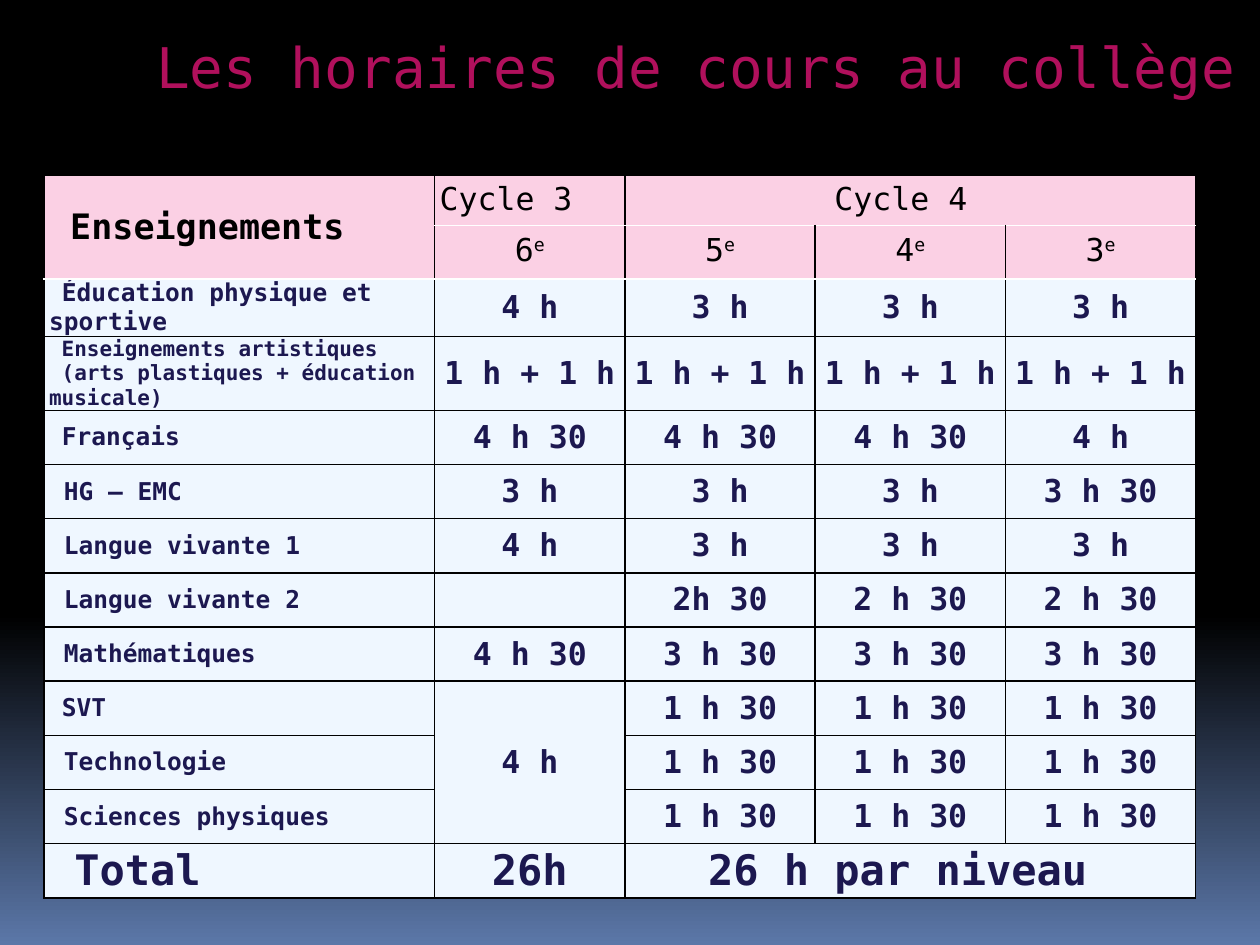
from dataclasses import dataclass

from lxml.etree import SubElement
from pptx import Presentation
from pptx.dml.color import RGBColor
from pptx.enum.text import MSO_ANCHOR, PP_ALIGN
from pptx.oxml.ns import qn
from pptx.util import Inches, Pt


@dataclass(frozen=True)
class Theme:
    font: str = "DejaVu Sans Mono"
    black: str = "000000"
    white: str = "FFFFFF"
    horizon: str = "5B77A8"
    title: str = "B0105C"
    header: str = "FBD0E4"
    body: str = "EFF7FF"
    ink: str = "1C1850"
    title_size: int = 32
    total_size: int = 24
    heading_size: int = 20
    hours_size: int = 18
    subject_size: int = 14
    small_size: int = 12


class TimetableSlide:
    """Draws timetable elements on a grid of tenths of an inch; in text, | ends a small lead and ^ starts a superscript."""

    def __init__(self, presentation, theme):
        self.theme = theme
        self.slide = presentation.slides.add_slide(presentation.slide_layouts[6])

    def grid(self, units):
        return Inches(units / 10)

    def background(self):
        fill = self.slide.background.fill
        fill.gradient()
        fill.gradient_angle = 270
        stops = ((0.65, self.theme.black), (1, self.theme.horizon))
        for stop, (position, color) in zip(fill.gradient_stops, stops):
            stop.position = position
            stop.color.rgb = RGBColor.from_string(color)

    def format_run(self, run, size, color, bold=False):
        run.font.name = self.theme.font
        run.font.size = Pt(size)
        run.font.bold = bold
        run.font.color.rgb = RGBColor.from_string(color)

    def fill_paragraph(self, paragraph, text, size, color, bold):
        lead, _, main_text = text.rpartition("|")
        base, _, raised = main_text.partition("^")
        paragraph.text = lead or base
        extra = [base] if lead else []
        for part in extra + ([raised] if raised else []):
            paragraph.add_run().text = part
        for run in paragraph.runs:
            self.format_run(run, size, color, bold)
        if lead:
            paragraph.runs[0].font.size = Pt(self.theme.small_size)
        if raised:
            paragraph.runs[-1].font._element.set("baseline", "30000")

    def title(self, text, left, top, width, height):
        box = self.slide.shapes.add_textbox(*map(self.grid, (left, top, width, height)))
        box.text_frame.word_wrap = True
        box.text_frame.text = text
        run = box.text_frame.paragraphs[0].runs[0]
        self.format_run(run, self.theme.title_size, self.theme.title)

    def table(self, left, top, columns, rows):
        frame = self.slide.shapes.add_table(
            len(rows), len(columns),
            *map(self.grid, (left, top, sum(columns), sum(rows))))
        for column, width in zip(frame.table.columns, columns):
            column.width = self.grid(width)
        for row, height in zip(frame.table.rows, rows):
            row.height = self.grid(height)
        return frame.table

    def borders(self, cell, top, bottom):
        black = self.theme.black
        properties = cell._tc.get_or_add_tcPr()
        for side, color in (("L", black), ("R", black), ("T", top), ("B", bottom)):
            line = SubElement(properties, qn(f"a:ln{side}"), w=str(Pt(1)))
            fill = SubElement(line, qn("a:solidFill"))
            SubElement(fill, qn("a:srgbClr"), val=color)

    def cell(self, cell, row, text, size, bold, align, anchor=MSO_ANCHOR.MIDDLE):
        theme = self.theme
        header = row < 2
        self.borders(cell, theme.white if row in (1, 2) else theme.black,
                     theme.white if header else theme.black)
        cell.fill.solid()
        cell.fill.fore_color.rgb = RGBColor.from_string(theme.header if header else theme.body)
        cell.margin_left = cell.margin_right = self.grid(0.4)
        cell.margin_top = cell.margin_bottom = self.grid(0.5 if header else 0)
        cell.vertical_anchor = anchor
        cell.text_frame.text = text
        color = theme.black if header else theme.ink
        for paragraph, line in zip(cell.text_frame.paragraphs, text.split("\n")):
            paragraph.alignment = align
            if line:
                self.fill_paragraph(paragraph, line, size, color, bold)


TIMETABLE = (
    (" Enseignements", "Cycle 3", "Cycle 4 ", "", ""),
    ("", "6^e", "5^e", "4^e", "3^e"),
    (" |Éducation physique et sportive", "4 h", "3 h", "3 h", "3 h"),
    (" Enseignements artistiques\n (arts plastiques + éducation musicale)", *["1 h + 1 h"] * 4),
    (" |Français", "4 h 30", "4 h 30", "4 h 30", "4 h"),
    (" HG – EMC", "3 h", "3 h", "3 h", "3 h 30"),
    (" Langue vivante 1", "4 h", "3 h", "3 h", "3 h"),
    (" Langue vivante 2", "", "2h 30", "2 h 30", "2 h 30"),
    (" Mathématiques", "4 h 30", "3 h 30", "3 h 30", "3 h 30"),
    (" |SVT", "4 h", "1 h 30", "1 h 30", "1 h 30"),
    (" Technologie", "", "1 h 30", "1 h 30", "1 h 30"),
    (" Sciences physiques", "", "1 h 30", "1 h 30", "1 h 30"),
    (" Total", "26h", "26 h par niveau ", "", ""),
)
MERGES = (((0, 0), (1, 0)), ((0, 2), (0, 4)), ((9, 1), (11, 1)), ((12, 2), (12, 4)))


def text_size(theme, row, column):
    if row == len(TIMETABLE) - 1:
        return theme.total_size
    if column:
        return theme.hours_size
    if row < 2:
        return theme.heading_size
    return theme.small_size if "\n" in TIMETABLE[row][0] else theme.subject_size


def main():
    presentation = Presentation()
    presentation.slide_width, presentation.slide_height = Inches(10), Inches(7.5)
    theme = Theme()
    page = TimetableSlide(presentation, theme)
    page.background()
    table = page.table(3.5, 13.9, [31] + [15.1] * 4, [4] * 2 + [4.3] * 11)
    for row, texts in enumerate(TIMETABLE):
        for column, text in enumerate(texts):
            left_aligned = column == 0 or (row, column) == (0, 1)
            page.cell(
                table.cell(row, column), row, text, text_size(theme, row, column),
                bold=row > 1 or column == 0,
                align=PP_ALIGN.LEFT if left_aligned else PP_ALIGN.CENTER,
                anchor=MSO_ANCHOR.TOP if row < 2 and column else MSO_ANCHOR.MIDDLE)
    for first, last in MERGES:
        table.cell(*first).merge(table.cell(*last))
    page.title("Les horaires de cours au collège", 11.4, 2.1, 88.6, 6.4)
    presentation.save("out.pptx")


if __name__ == "__main__":
    main()
